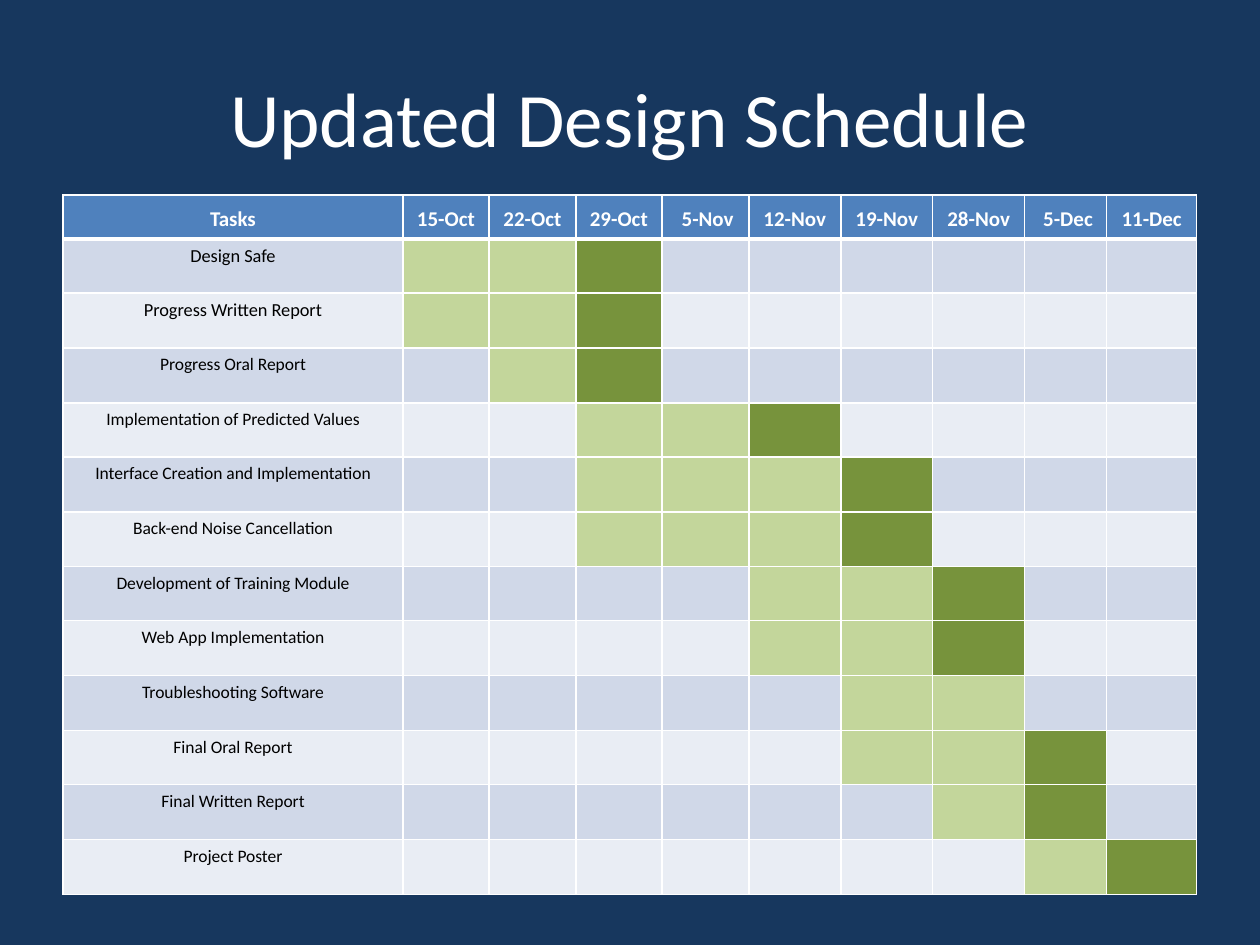
import pptx
import pptx.dml.color
import pptx.enum.text
import pptx.util
from lxml import etree
from pptx.oxml.ns import qn

RGB = pptx.dml.color.RGBColor
NAVY = RGB(0x17, 0x37, 0x5E)
WHITE = RGB(0xFF, 0xFF, 0xFF)
BLACK = RGB(0, 0, 0)
BLUE = RGB(0x4F, 0x81, 0xBD)
BANDS = (RGB(0xD0, 0xD8, 0xE8), RGB(0xE9, 0xED, 0xF4))
WORK = RGB(0xC3, 0xD6, 0x9B)
DUE = RGB(0x77, 0x93, 0x3C)
FONT = "Calibri"
CENTER = pptx.enum.text.PP_ALIGN.CENTER
MIDDLE = pptx.enum.text.MSO_ANCHOR.MIDDLE

COLS = (340, 86, 87, 86, 87, 92, 92, 92, 82, 90)
HEAD = 44
BODY = 656
DATES = ("15-Oct", "22-Oct", "29-Oct", " 5-Nov", "12-Nov",
         "19-Nov", "28-Nov", " 5-Dec", "11-Dec")
# Task, size, first work column, number of work columns, has a due date
TASKS = (
    ("Design Safe", 10.5, 1, 2, True),
    ("Progress Written Report", 10.5, 1, 2, True),
    ("Progress Oral Report", 10, 2, 1, True),
    ("Implementation of Predicted Values", 10, 3, 2, True),
    ("Interface Creation and Implementation", 10, 3, 3, True),
    ("Back-end Noise Cancellation", 10, 3, 3, True),
    ("Development of Training Module", 10, 5, 2, True),
    ("Web App Implementation", 10, 5, 2, True),
    ("Troubleshooting Software", 10, 6, 2, False),
    ("Final Oral Report", 10, 6, 2, True),
    ("Final Written Report", 10, 7, 1, True),
    ("Project Poster", 10, 8, 1, True),
)


def px(n):
    return pptx.util.Emu(round(n * 914400 / 126))


def write(frame, text, size, color, bold=False):
    par = frame.paragraphs[0]
    par.alignment = CENTER
    run = par.add_run()
    run.text = text
    run.font.name = FONT
    run.font.size = pptx.util.Pt(size)
    run.font.bold = bold
    run.font.color.rgb = color
    return par


def paint(cell, color, top=1, base=1):
    """Give the cell white borders, then its fill."""
    props = cell._tc.get_or_add_tcPr()
    for side, width in (("L", 1), ("R", 1), ("T", top), ("B", base)):
        line = etree.SubElement(props, qn("a:ln" + side),
                                w=str(pptx.util.Pt(width)))
        fill = etree.SubElement(line, qn("a:solidFill"))
        etree.SubElement(fill, qn("a:srgbClr"), val=str(WHITE))
    cell.fill.solid()
    cell.fill.fore_color.rgb = color


def add_title(slide):
    title = slide.shapes.title
    title.left, title.top = px(63), px(38)
    title.width, title.height = px(1134), px(157)
    title.text_frame.vertical_anchor = MIDDLE
    write(title.text_frame, "Updated Design Schedule", 44, WHITE)


def fill_head(table):
    for cell, text in zip(table.rows[0].cells, ("Tasks",) + DATES):
        paint(cell, BLUE, base=3)
        cell.vertical_anchor = MIDDLE
        cell.margin_left = cell.margin_right = px(9)
        cell.margin_top = cell.margin_bottom = 0
        write(cell.text_frame, text, 12, WHITE, True).line_spacing = 1.15


def fill_task(table, row, task):
    name, size, start, count, due = task
    end = start + count
    for col in range(len(COLS)):
        color = BANDS[(row - 1) % 2]
        if start <= col < end:
            color = WORK
        elif due and col == end:
            color = DUE
        paint(table.cell(row, col), color, top=3 if row == 1 else 1)
    write(table.cell(row, 0).text_frame, name, size, BLACK)


def add_plan(slide):
    count = len(TASKS)
    frame = slide.shapes.add_table(count + 1, len(COLS), px(63), px(195),
                                   px(sum(COLS)), px(HEAD + BODY))
    table = frame.table
    for col, width in zip(table.columns, COLS):
        col.width = px(width)
    table.rows[0].height = px(HEAD)
    fill_head(table)
    for row, task in enumerate(TASKS, 1):
        height = BODY * row // count - BODY * (row - 1) // count
        table.rows[row].height = px(height)
        fill_task(table, row, task)


def main():
    deck = pptx.Presentation()
    deck.slide_width, deck.slide_height = px(1260), px(945)
    slide = deck.slides.add_slide(deck.slide_layouts[5])
    slide.background.fill.solid()
    slide.background.fill.fore_color.rgb = NAVY
    add_title(slide)
    add_plan(slide)
    deck.save("out.pptx")


if __name__ == "__main__":
    main()
